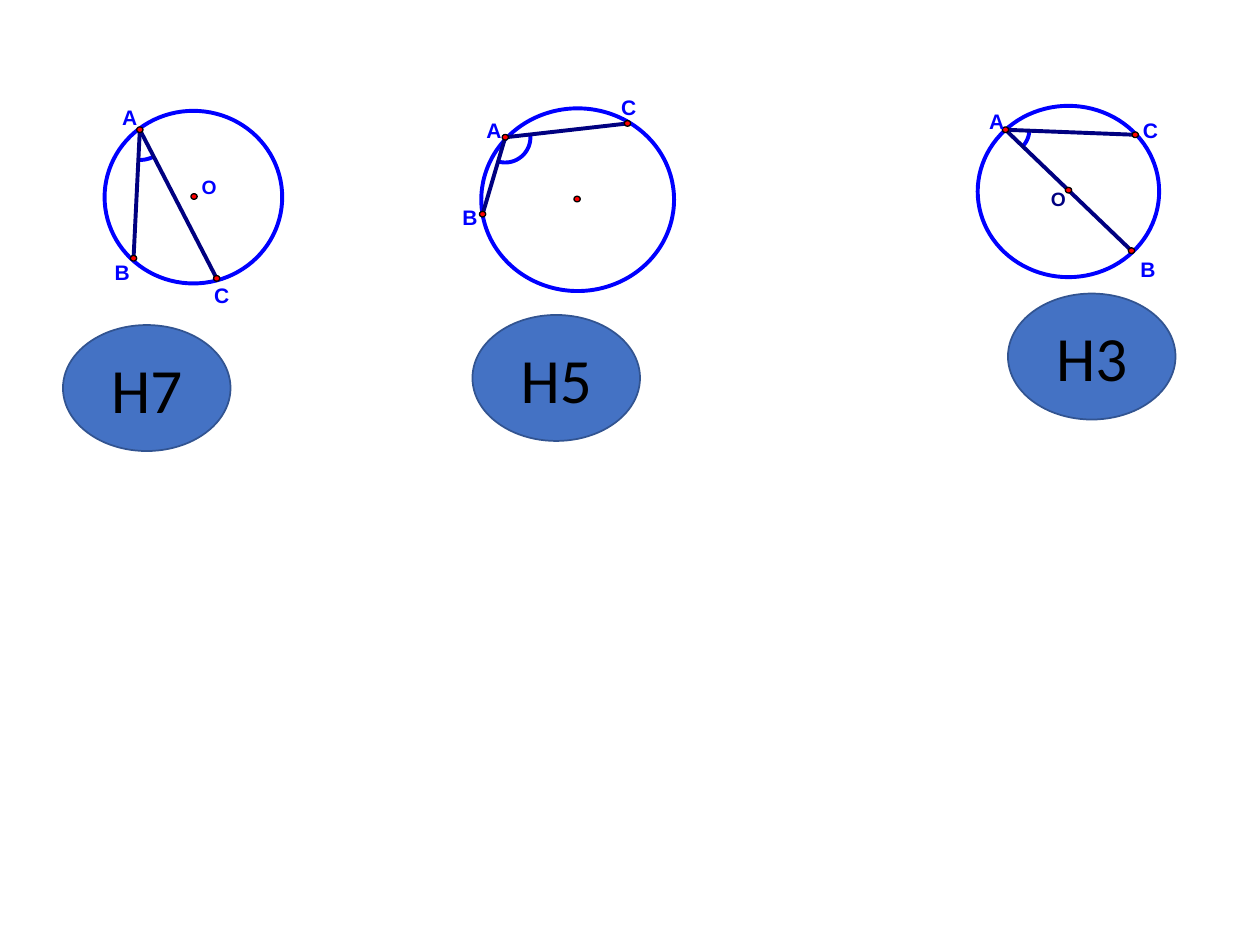
import math

import pptx
import pptx.dml.color
import pptx.enum.shapes
import pptx.enum.text
import pptx.util
from lxml import etree

BLUE, NAVY, RED, BLACK = "0000FF", "000080", "FF0000", "000000"
OVAL_FILL, OVAL_LINE = "4472C4", "325491"
DOT = (0.05, 0.045)
LABEL = (0.12, 0.2)
OVAL = (1.33, 1)
ARC_STEPS = 24

# Inches. Each point has its place; each label has its top left corner.
FIGURES = [
    {
        "circle": (0.83, 0.88, 1.41, 1.37), "angle_radius": 0.24, "align": "LEFT",
        "points": {"O": (1.54, 1.56), "A": (1.11, 1.03), "B": (1.06, 2.05), "C": (1.72, 2.21)},
        "labels": {"O": (1.6, 1.39), "A": (0.97, 0.83), "B": (0.91, 2.06), "C": (1.7, 2.24)},
        "center_label": (11, BLUE), "name": "H7", "name_at": (0.5, 2.58),
    },
    {
        "circle": (3.82, 0.86, 1.53, 1.45), "angle_radius": 0.2, "align": "CENTER",
        "points": {"O": (4.58, 1.58), "A": (4.01, 1.09), "B": (3.83, 1.7), "C": (4.98, 0.98)},
        "labels": {"A": (3.86, 0.93), "B": (3.67, 1.62), "C": (4.93, 0.75)},
        "center_label": None, "name": "H5", "name_at": (3.75, 2.5),
    },
    {
        "circle": (7.76, 0.84, 1.44, 1.36), "angle_radius": 0.19, "align": "LEFT",
        "points": {"O": (8.48, 1.51), "A": (7.98, 1.03), "B": (8.98, 1.99), "C": (9.01, 1.07)},
        "labels": {"O": (8.34, 1.49), "A": (7.85, 0.86), "B": (9.05, 2.04), "C": (9.07, 0.93)},
        "center_label": (11, NAVY), "name": "H3", "name_at": (8, 2.33),
    },
]


def rgb(color):
    return pptx.dml.color.RGBColor.from_string(color)


def inches(*lengths):
    return [pptx.util.Inches(length) for length in lengths]


def style_line(shape, color, width):
    shape.line.color.rgb = rgb(color)
    shape.line.width = pptx.util.Pt(width)


def style_shape(shape, fill, line, width):
    shape.shadow.inherit = False
    if fill:
        shape.fill.solid()
        shape.fill.fore_color.rgb = rgb(fill)
    else:
        shape.fill.background()
    style_line(shape, line, width)


def add_ellipse(shapes, box, fill, line, width):
    ellipse = shapes.add_shape(pptx.enum.shapes.MSO_SHAPE.OVAL, *inches(*box))
    style_shape(ellipse, fill, line, width)
    return ellipse


def write(shape, text, font, size, color, align, bold=False):
    paragraph = shape.text_frame.paragraphs[0]
    paragraph.alignment = getattr(pptx.enum.text.PP_ALIGN, align)
    run = paragraph.add_run()
    run.text = text
    run.font.name = font
    run.font.size = pptx.util.Pt(size)
    run.font.bold = bold
    run.font.color.rgb = rgb(color)


def add_chord(shapes, start, end):
    chord = shapes.add_connector(
        pptx.enum.shapes.MSO_CONNECTOR.STRAIGHT, *inches(*start, *end))
    style_line(chord, NAVY, 2.25)
    namespace = chord.element.nsmap["a"]
    etree.SubElement(chord.element.spPr, f"{{{namespace}}}effectLst")


def add_angle_mark(shapes, vertex, from_point, to_point, radius):
    """Draw the open arc at vertex between the directions of two points."""
    first, last = (math.atan2(y - vertex[1], x - vertex[0]) for x, y in (from_point, to_point))
    angles = [first + (last - first) * step / ARC_STEPS for step in range(ARC_STEPS + 1)]
    arc = [inches(vertex[0] + radius * math.cos(angle), vertex[1] + radius * math.sin(angle))
           for angle in angles]
    builder = shapes.build_freeform(*arc[0])
    builder.add_line_segments(arc[1:], close=False)
    style_shape(builder.convert_to_shape(), None, BLUE, 2.25)


def add_label(shapes, letter, corner, size, color, align):
    label = shapes.add_textbox(*inches(*corner, *LABEL))
    frame = label.text_frame
    frame.margin_left = frame.margin_top = frame.margin_right = frame.margin_bottom = 0
    frame.word_wrap = False
    frame.auto_size = pptx.enum.text.MSO_AUTO_SIZE.SHAPE_TO_FIT_TEXT
    write(label, letter, "Arial", size, color, align, bold=True)


def add_figure(slide, figure):
    shapes = slide.shapes.add_group_shape().shapes
    points = figure["points"]
    add_angle_mark(shapes, points["A"], points["C"], points["B"], figure["angle_radius"])
    add_ellipse(shapes, figure["circle"], None, BLUE, 2.25)
    for end in "BC":
        add_chord(shapes, points["A"], points[end])
    for letter, (x, y) in points.items():
        add_ellipse(shapes, (x - DOT[0] / 2, y - DOT[1] / 2, *DOT), RED, BLACK, 0)
        if letter in figure["labels"]:
            size, color = figure["center_label"] if letter == "O" else (12, BLUE)
            add_label(shapes, letter, figure["labels"][letter], size, color, figure["align"])


def add_name(slide, figure):
    oval = add_ellipse(slide.shapes, (*figure["name_at"], *OVAL), OVAL_FILL, OVAL_LINE, 1)
    oval.text_frame.vertical_anchor = pptx.enum.text.MSO_ANCHOR.MIDDLE
    write(oval, figure["name"], "Calibri", 36, BLACK, "CENTER")


def main():
    presentation = pptx.Presentation()
    presentation.slide_width, presentation.slide_height = inches(10, 7.5)
    slide = presentation.slides.add_slide(presentation.slide_layouts[6])
    for figure in FIGURES:
        add_figure(slide, figure)
    for figure in FIGURES:
        add_name(slide, figure)
    presentation.save("out.pptx")


if __name__ == "__main__":
    main()
